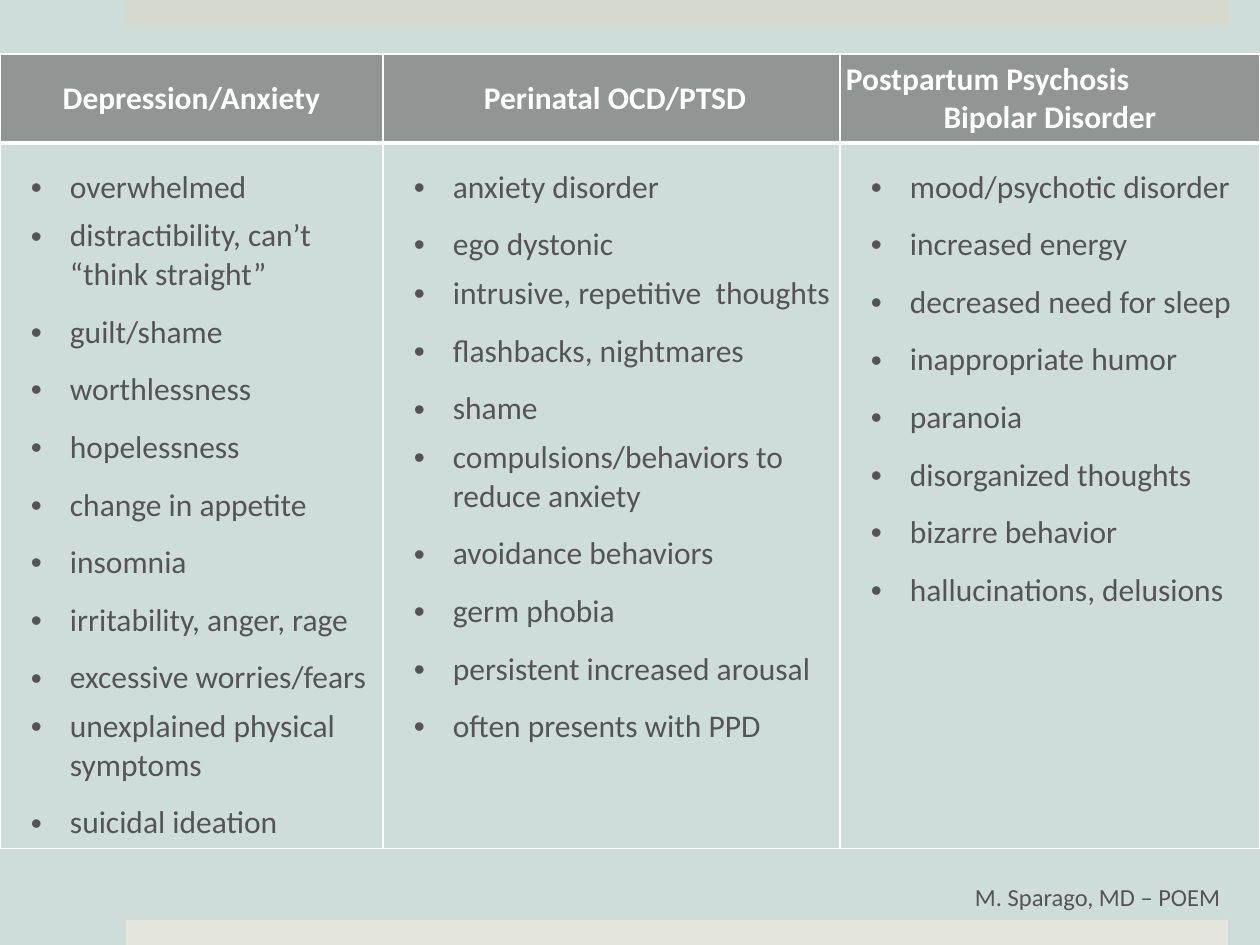
from dataclasses import dataclass

from lxml import etree
from pptx import Presentation
from pptx.dml.color import RGBColor
from pptx.enum.shapes import MSO_SHAPE
from pptx.enum.text import MSO_ANCHOR, MSO_AUTO_SIZE, PP_ALIGN
from pptx.oxml.ns import qn
from pptx.util import Emu, Pt

RECT = MSO_SHAPE.RECTANGLE
MIDDLE, TOP = MSO_ANCHOR.MIDDLE, MSO_ANCHOR.TOP
LEFT, CENTER = PP_ALIGN.LEFT, PP_ALIGN.CENTER
GROW = MSO_AUTO_SIZE.SHAPE_TO_FIT_TEXT

WIDTH, HEIGHT = 1260, 945
SCALE = 914400 / 126
FONT = "Calibri"
WHITE, INK, GRAY, MINT = "FFFFFF", "545454", "7D7D7D", "CFDDDA"
INSET = 6


@dataclass
class Bar:
    top: int
    height: int
    color: str


@dataclass
class Column:
    width: int
    title: str
    aligns: tuple
    items: tuple


BARS = (Bar(0, 25, "D6D9CD"), Bar(920, 25, "E4E6DE"))

TIGHT = {
    "distractibility, can’t “think straight”",
    "unexplained physical symptoms",
    "intrusive, repetitive  thoughts",
    "compulsions/behaviors to reduce anxiety",
}

COLUMNS = (
    Column(383, "Depression/Anxiety", (CENTER,), (
        "overwhelmed",
        "distractibility, can’t “think straight”",
        "guilt/shame",
        "worthlessness",
        "hopelessness",
        "change in appetite",
        "insomnia",
        "irritability, anger, rage",
        "excessive worries/fears",
        "unexplained physical symptoms",
        "suicidal ideation",
    )),
    Column(457, " Perinatal OCD/PTSD", (CENTER,), (
        "anxiety disorder",
        "ego dystonic",
        "intrusive, repetitive  thoughts",
        "flashbacks, nightmares",
        "shame",
        "compulsions/behaviors to reduce anxiety",
        "avoidance behaviors",
        "germ phobia",
        "persistent increased arousal",
        "often presents with PPD",
    )),
    Column(420, "Postpartum Psychosis\nBipolar Disorder", (LEFT, CENTER), (
        "mood/psychotic disorder",
        "increased energy",
        "decreased need for sleep",
        "inappropriate humor",
        "paranoia",
        "disorganized thoughts",
        "bizarre behavior",
        "hallucinations, delusions",
    )),
)


def px(size: int) -> Emu:
    return Emu(round(size * SCALE))


def rgb(color: str) -> RGBColor:
    return RGBColor.from_string(color)


def style(frame, size: int, color: str, bold: bool = False) -> None:
    for para in frame.paragraphs:
        for run in para.runs:
            run.font.name = FONT
            run.font.size = Pt(size)
            run.font.bold = bold
            run.font.color.rgb = rgb(color)


def pad(box) -> None:
    box.margin_left = box.margin_right = px(INSET)
    box.margin_top = box.margin_bottom = px(INSET)


def edge(cell, base: int) -> None:
    props = cell._tc.get_or_add_tcPr()
    for side, width in (("L", 1), ("R", 1), ("T", 1), ("B", base)):
        line = etree.SubElement(props, qn(f"a:ln{side}"), w=str(Pt(width)))
        fill = etree.SubElement(line, qn("a:solidFill"))
        etree.SubElement(fill, qn("a:srgbClr"), val=WHITE)


def bullet(para, tight: bool) -> None:
    if tight:
        para.space_before = Pt(6)
    else:
        para.line_spacing = 1.5
    props = para._p.get_or_add_pPr()
    props.set("marL", str(px(64)))
    props.set("indent", str(px(-39)))
    etree.SubElement(props, qn("a:buFont"), typeface="Arial")
    etree.SubElement(props, qn("a:buChar"), char="•")


def head(cell, col: Column) -> None:
    pad(cell)
    cell.vertical_anchor = MIDDLE
    cell.text_frame.text = col.title
    for para, align in zip(cell.text_frame.paragraphs, col.aligns):
        para.alignment = align
    style(cell.text_frame, 18, WHITE, True)
    edge(cell, 3)
    cell.fill.solid()
    cell.fill.fore_color.rgb = rgb(GRAY)
    tint = cell._tc.tcPr.find(f"{qn('a:solidFill')}/{qn('a:srgbClr')}")
    etree.SubElement(tint, qn("a:alpha"), val="75000")


def body(cell, col: Column) -> None:
    pad(cell)
    cell.vertical_anchor = TOP
    cell.text_frame.text = "\n".join(col.items)
    for para, item in zip(cell.text_frame.paragraphs, col.items):
        bullet(para, item in TIGHT)
    style(cell.text_frame, 18, INK)
    edge(cell, 1)
    cell.fill.background()


def band(slide, bar: Bar) -> None:
    shape = slide.shapes.add_shape(
        RECT, px(126), px(bar.top), px(1102), px(bar.height))
    shape.shadow.inherit = False
    shape.fill.solid()
    shape.fill.fore_color.rgb = rgb(bar.color)
    shape.line.fill.background()


def grid(slide) -> None:
    frame = slide.shapes.add_table(
        2, len(COLUMNS), px(0), px(54), px(WIDTH), px(782))
    table = frame.table
    table.horz_banding = False
    table.rows[0].height, table.rows[1].height = px(83), px(699)
    for i, col in enumerate(COLUMNS):
        table.columns[i].width = px(col.width)
        head(table.cell(0, i), col)
        body(table.cell(1, i), col)


def credit(slide) -> None:
    box = slide.shapes.add_textbox(px(969), px(876), px(267), px(43))
    frame = box.text_frame
    pad(frame)
    frame.word_wrap = False
    frame.auto_size = GROW
    frame.text = "M. Sparago, MD – POEM"
    style(frame, 14, INK)


def main() -> None:
    deck = Presentation()
    deck.slide_width, deck.slide_height = px(WIDTH), px(HEIGHT)
    slide = deck.slides.add_slide(deck.slide_layouts[6])
    slide.background.fill.solid()
    slide.background.fill.fore_color.rgb = rgb(MINT)
    for bar in BARS:
        band(slide, bar)
    grid(slide)
    credit(slide)
    deck.save("out.pptx")


if __name__ == "__main__":
    main()
